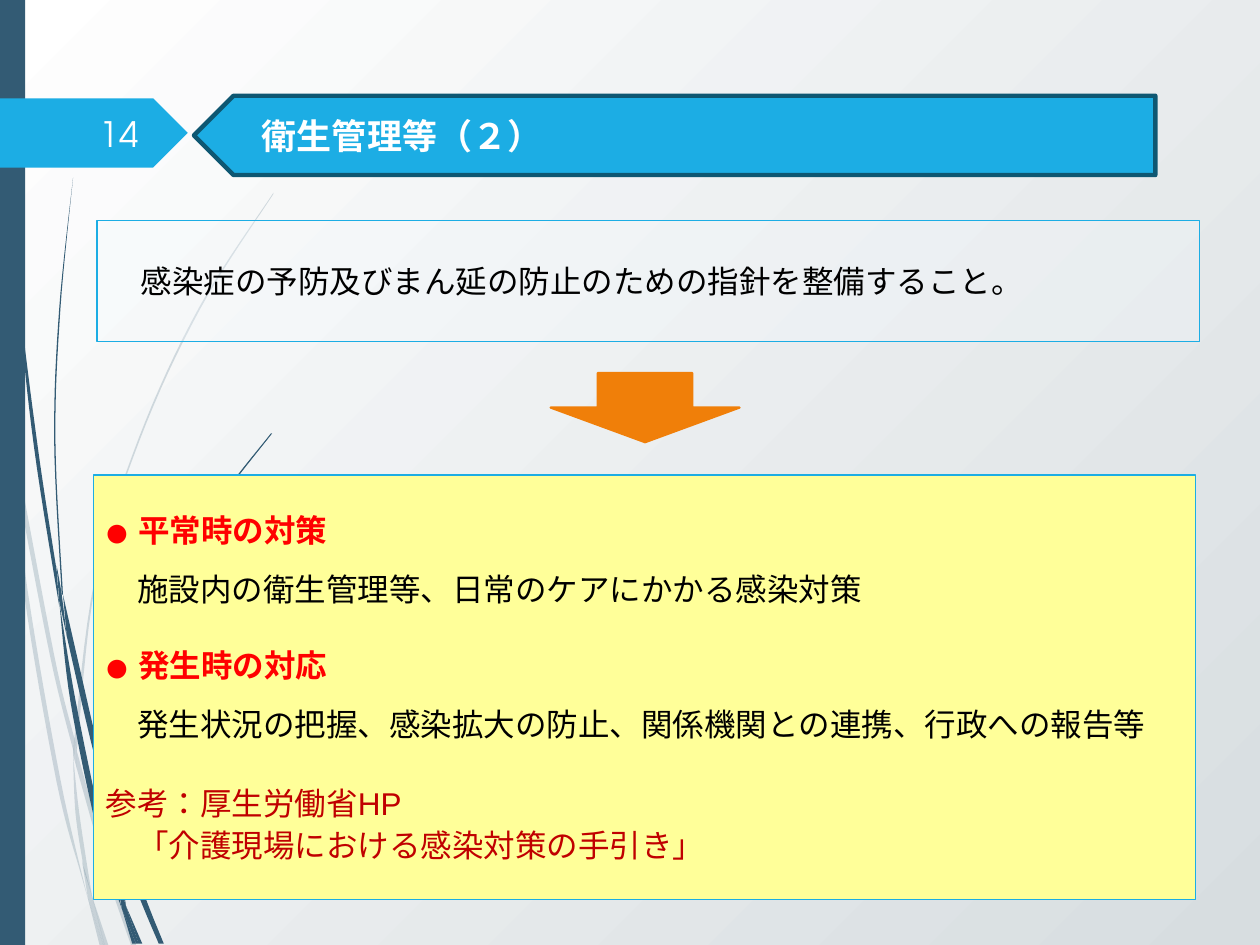
from dataclasses import dataclass

from lxml import etree
from pptx import Presentation
from pptx import util as u
from pptx.dml.color import RGBColor
from pptx.enum import lang, shapes, text
from pptx.oxml.ns import qn


@dataclass(frozen=True)
class Theme:
    navy: str = "335B74"
    blue: str = "1CADE4"
    deep_blue: str = "0E5772"
    orange: str = "F07F09"
    yellow: str = "FFFF99"
    ice: str = "F4FAFF"
    white: str = "FFFFFF"
    grey: str = "D7DDE0"
    black: str = "000000"
    red: str = "FF0000"
    dark_red: str = "C00000"
    main_font: str = "TeX Gyre Adventor"
    plain_font: str = "Arial"
    japanese_font: str = "Noto Sans CJK JP"
    title_size: int = 20
    body_size: int = 18


THEME = Theme()
WIDTH, HEIGHT = u.Inches(10), u.Inches(7.5)
COLUMNS, ROWS = 100, 75

# Each stem piece has two edges: there and back, in inches
PALE_STEMS = [
    ([(0, 2.82), (.06, 3.22), (.08, 3.5)], [(.07, 3.44), (0, 2.99)]),
    ([(.1, 3.45), (.43, 5.2), (.59, 5.86)], [(.59, 5.99), (.4, 5.22), (.12, 3.76)]),
    ([(.61, 5.96), (.88, 6.92), (1.08, 7.5)], [(1.04, 7.5), (.85, 6.94), (.61, 6.1)]),
    ([(.73, 7.11), (.86, 7.5)], [(.83, 7.5)]),
    ([(.08, 3.5), (.22, 4.69), (.48, 6.19), (.7, 7.14)],
     [(.64, 6.93), (.45, 6.21), (.19, 4.7), (.08, 3.5)]),
    ([(.58, 5.99), (.63, 6.46), (.73, 7.11)], [(.67, 6.92), (.6, 6.46), (.58, 5.99)]),
    ([(.59, 5.86), (.75, 4.61), (1.1, 3.48), (1.58, 2.44), (2.17, 1.53)],
     [(2.17, 1.54), (1.59, 2.45), (1.11, 3.49), (.76, 4.62), (.61, 5.96)]),
    ([(.7, 7.14), (.82, 7.5)], [(.79, 7.5)]),
    ([(.59, 5.86), (.61, 5.96), (.61, 6.1)], [(.58, 5.99)]),
    ([(.65, 6.83), (.73, 7.11), (.83, 7.5)], [(.82, 7.5), (.7, 7.14)]),
]
DARK_STEMS = [
    ([(.02, 0), (.05, 1.1), (.14, 2.33), (.27, 3.55), (.47, 4.81)],
     [(.45, 4.53), (.3, 3.55), (.15, 2.32), (.06, 1.09), (.03, 0)]),
    ([(.5, 4.72), (.77, 5.9), (.88, 6.33)], [(.88, 6.45), (.73, 5.92), (.53, 5.05)]),
    ([(.91, 6.41), (1.13, 7.06), (1.3, 7.49)], [(1.26, 7.49), (1.09, 7.08), (.91, 6.56)]),
    ([(.47, 4.77), (.6, 5.56), (.81, 6.57), (.97, 7.22)],
     [(.92, 7.08), (.77, 6.59), (.56, 5.57), (.47, 4.77)]),
    ([(.58, 1.41), (.48, 2.45), (.44, 3.49), (.5, 4.72)],
     [(.49, 4.72), (.43, 3.49), (.47, 2.45), (.58, 1.41)]),
    ([(1, 7.19), (1.13, 7.49)], [(1.1, 7.49)]),
    ([(.45, 4.49), (.49, 4.72), (.53, 5.05)], [(.47, 4.77)]),
    ([(.88, 6.31), (1.01, 5.51), (1.29, 4.74), (1.68, 4.05), (2.15, 3.44)],
     [(2.16, 3.44), (1.69, 4.06), (1.31, 4.76), (1.03, 5.52), (.91, 6.41)]),
    ([(.97, 7.22), (1.08, 7.49)], [(1.05, 7.49)]),
    ([(.88, 6.45), (.91, 6.56), (1, 7.19)], [(.91, 6.91)]),
    ([(.91, 6.91), (1, 7.19), (1.1, 7.49)], [(1.08, 7.49), (.97, 7.22)]),
]


def grid(column, row, columns, rows):
    """Left, top, width and height of a block of grid cells."""
    return [round(share) for share in (
        WIDTH * column / COLUMNS, HEIGHT * row / ROWS,
        WIDTH * columns / COLUMNS, HEIGHT * rows / ROWS)]


def smooth(knots, steps=8):
    """Points on a Catmull-Rom curve through the knots."""
    padded = [knots[0], *knots, knots[-1]]
    points = []
    for a, b, c, d in zip(padded, padded[1:], padded[2:], padded[3:]):
        for step in range(steps):
            t = step / steps
            points.append(tuple(
                (2 * q + (r - p) * t + (2 * p - 5 * q + 4 * r - s) * t ** 2
                 + (3 * q - p - 3 * r + s) * t ** 3) / 2
                for p, q, r, s in zip(a, b, c, d)))
    return points + [knots[-1]]


def paint(shape, fill, line=None, weight=0.75, opacity=100):
    shape.fill.solid()
    shape.fill.fore_color.rgb = RGBColor.from_string(fill)
    if opacity < 100:
        color = shape.element.spPr.find(qn("a:solidFill"))[0]
        etree.SubElement(color, qn("a:alpha"), val=str(opacity * 1000))
    if line:
        shape.line.color.rgb = RGBColor.from_string(line)
        shape.line.width = u.Pt(weight)
    else:
        shape.line.fill.background()


def add_block(page, kind, place, fill, **look):
    block = page.shapes.add_shape(kind, *place)
    block.shadow.inherit = False
    paint(block, fill, **look)
    return block


def add_stem(page, edges, opacity):
    points = [(u.Inches(x), u.Inches(y)) for edge in edges for x, y in smooth(edge)]
    builder = page.shapes.build_freeform(*points[0])
    builder.add_line_segments(points[1:], close=True)
    stem = builder.convert_to_shape()
    stem.shadow.inherit = False
    paint(stem, THEME.navy, opacity=opacity)


def take_placeholder(holder, place):
    """Move a template placeholder into position and to the front."""
    holder.left, holder.top, holder.width, holder.height = place
    holder.element.getparent().append(holder.element)
    return holder


def setup_frame(box):
    frame = box.text_frame
    frame.word_wrap = True
    frame.auto_size = text.MSO_AUTO_SIZE.NONE
    frame.vertical_anchor = text.MSO_ANCHOR.MIDDLE
    return frame


def write(para, words, *, color, font=THEME.main_font, size=THEME.body_size, bold=False,
          before=0, after=0, spacing=1.0, align=text.PP_ALIGN.LEFT):
    para.alignment = align
    para.space_before, para.space_after = u.Pt(before), u.Pt(after)
    para.line_spacing = spacing
    span = para.add_run()
    span.text = words
    span.font.name, span.font.size, span.font.bold = font, u.Pt(size), bold
    span.font.color.rgb = RGBColor.from_string(color)
    span.font.language_id = lang.MSO_LANGUAGE_ID.JAPANESE
    etree.SubElement(span.font._element, qn("a:ea"), typeface=font)


def remove_bullet(para):
    props = para._p.get_or_add_pPr()
    props.set("marL", "0")
    props.set("indent", "0")
    etree.SubElement(props, qn("a:buNone"))


def draw_backdrop(page):
    fill = page.background.fill
    fill.gradient()
    fill.gradient_angle = 315
    for stop, color, position in zip(fill.gradient_stops, (THEME.white, THEME.grey), (0, 1)):
        stop.color.rgb = RGBColor.from_string(color)
        stop.position = position
    for stems, opacity in ((PALE_STEMS, 20), (DARK_STEMS, 100)):
        for edges in stems:
            add_stem(page, edges, opacity)
    add_block(page, shapes.MSO_SHAPE.RECTANGLE, grid(0, 0, 2, ROWS), THEME.navy)


def draw_header(page):
    # Page number on its tag
    add_block(page, shapes.MSO_SHAPE.PENTAGON, grid(0, 7.8, 14.9, 5.5), THEME.blue)
    number = page.shapes.add_textbox(*grid(5.6, 8.6, 6.4, 4))
    write(setup_frame(number).paragraphs[0], "14", color=THEME.white,
          size=THEME.title_size, align=text.PP_ALIGN.RIGHT)
    # Title on a plate that points left
    place = grid(15.4, 7.6, 76.3, 6.3)
    plate = add_block(page, shapes.MSO_SHAPE.PENTAGON, place, THEME.blue,
                      line=THEME.deep_blue, weight=2.5)
    plate.element.spPr.get_or_add_xfrm().set("flipH", "1")
    frame = setup_frame(take_placeholder(page.shapes.title, place))
    frame.margin_left = u.Inches(0.26)
    for words, font in (("　", THEME.plain_font), ("衛生管理等", THEME.japanese_font),
                        ("（２）", THEME.main_font)):
        write(frame.paragraphs[0], words, color=THEME.white, font=font,
              size=THEME.title_size, bold=True)


def draw_measures(page):
    body = take_placeholder(page.placeholders[1], grid(7.4, 37.7, 87.5, 33.7))
    paint(body, THEME.yellow, line=THEME.blue)
    frame = setup_frame(body)
    heading = dict(color=THEME.red, bold=True, after=12)
    detail = dict(color=THEME.black)
    source = dict(color=THEME.dark_red, font=THEME.plain_font)
    lines = [
        ("● 平常時の対策", dict(heading, before=12)),
        ("　施設内の衛生管理等、日常のケアにかかる感染対策", detail),
        ("● 発生時の対応", dict(heading, before=22)),
        ("　発生状況の把握、感染拡大の防止、関係機関との連携、行政への報告等", dict(detail, after=12)),
        ("参考：厚生労働省HP", dict(source, before=12)),
        ("　「介護現場における感染対策の手引き」", dict(source, spacing=1.1)),
    ]
    for index, (words, style) in enumerate(lines):
        para = frame.add_paragraph() if index else frame.paragraphs[0]
        write(para, words, **style)
        remove_bullet(para)


def draw_requirement(page):
    box = add_block(page, shapes.MSO_SHAPE.RECTANGLE, grid(7.7, 17.5, 87.5, 9.6),
                    THEME.ice, line=THEME.blue, opacity=25)
    write(setup_frame(box).paragraphs[0],
          "　感染症の予防及びまん延の防止のための指針を整備すること。",
          color=THEME.black, before=6, after=6)


def main():
    deck = Presentation()
    deck.slide_width, deck.slide_height = WIDTH, HEIGHT
    page = deck.slides.add_slide(deck.slide_layouts[1])
    draw_backdrop(page)
    draw_measures(page)
    add_block(page, shapes.MSO_SHAPE.DOWN_ARROW, grid(43.7, 29.6, 15, 5.5),
              THEME.orange, line=THEME.orange, weight=1.25)
    draw_header(page)
    draw_requirement(page)
    deck.save("out.pptx")


if __name__ == "__main__":
    main()
